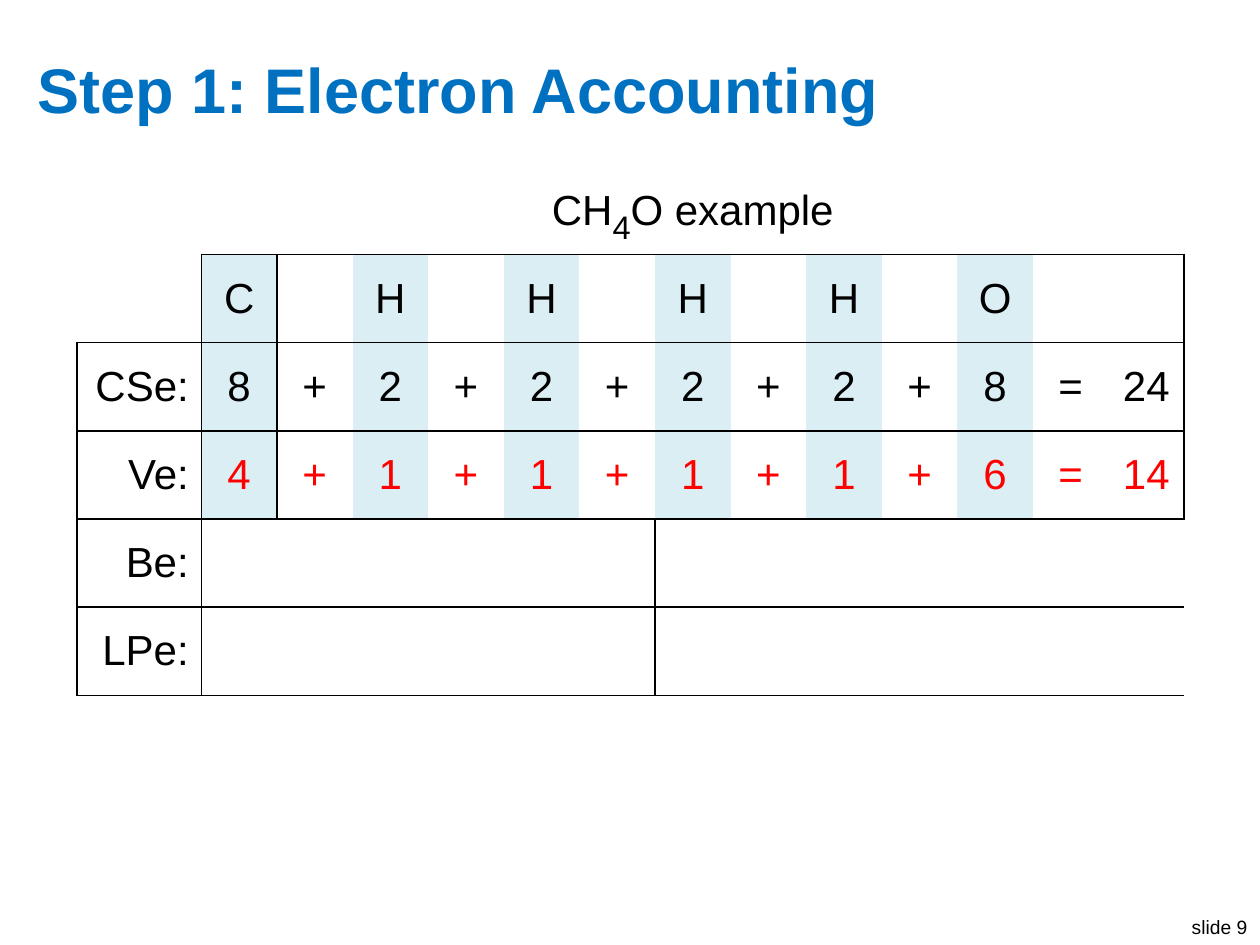
from dataclasses import dataclass

from lxml.etree import SubElement
from pptx import Presentation
from pptx.dml.color import RGBColor
from pptx.enum.text import MSO_ANCHOR as Anchor, MSO_AUTO_SIZE as AutoSize, PP_ALIGN as Align
from pptx.oxml.ns import qn
from pptx.util import Cm, Pt


@dataclass(frozen=True)
class Theme:
    """Colours, font and type sizes of the slide."""
    font: str = "Arial"
    title: str = "0070C0"
    ink: str = "000000"
    accent: str = "FF0000"
    paper: str = "FFFFFF"
    band: str = "DBEEF4"
    title_size: int = 36
    body_size: int = 24
    subscript_size: int = 32
    footer_size: int = 11


THEME = Theme()
NO_STYLE = "{2D5ABB26-0587-4C30-8999-92F81FD0307C}"
ATOMS = ["C", "H", "H", "H", "H", "O"]
COUNTS = [
    ("CSe:", [8, 2, 2, 2, 2, 8], THEME.ink),
    ("Ve:", [4, 1, 1, 1, 1, 6], THEME.accent),
]
PENDING = ["Be:", "LPe:"]
LABEL_WIDTH, UNIT_WIDTH, ROW_HEIGHT = 2.51, 1.524, 1.778
UNIT_COUNT = 2 * len(ATOMS) + 1
SPLIT = 7


def add_run(paragraph, text, size=THEME.body_size, color=THEME.ink, bold=False):
    """Append one formatted run and return it."""
    run = paragraph.add_run()
    run.text = text
    formats = {"name": THEME.font, "size": Pt(size), "bold": bold}
    for name, value in formats.items():
        setattr(run.font, name, value)
    run.font.color.rgb = RGBColor.from_string(color)
    return run


def add_label(slide, box, text, align, wrap, **style):
    """Place a line of text, vertically centred, in the given box."""
    frame = slide.shapes.add_textbox(*map(Cm, box)).text_frame
    formats = {"word_wrap": wrap, "auto_size": AutoSize.NONE, "vertical_anchor": Anchor.MIDDLE}
    for name, value in formats.items():
        setattr(frame, name, value)
    paragraph = frame.paragraphs[0]
    paragraph.alignment = align
    add_run(paragraph, text, **style)


def style_cell(cell, sides="", fill=THEME.paper):
    """Fill a cell and rule the named sides, out of L, R, T and B."""
    properties = cell._tc.get_or_add_tcPr()
    for side in "LRTB":
        if side in sides:
            line = SubElement(properties, qn(f"a:ln{side}"), w=str(Pt(1)))
            solid = SubElement(line, qn("a:solidFill"))
            SubElement(solid, qn("a:srgbClr"), val=THEME.ink)
    cell.fill.solid()
    cell.fill.fore_color.rgb = RGBColor.from_string(fill)
    cell.vertical_anchor = Anchor.MIDDLE


def write_cell(cell, text, align=Align.CENTER, color=THEME.ink):
    """Write text into a cell."""
    paragraph = cell.text_frame.paragraphs[0]
    paragraph.alignment = align
    if text:
        add_run(paragraph, text, color=color)


def fill_caption(table):
    """Write the formula across the top row."""
    style_cell(table.cell(0, 0))
    caption = table.cell(0, 1)
    caption.merge(table.cell(0, UNIT_COUNT))
    for column in range(1, UNIT_COUNT + 1):
        style_cell(table.cell(0, column), "B")
    write_cell(caption, "CH")
    paragraph = caption.text_frame.paragraphs[0]
    subscript = add_run(paragraph, "4", size=THEME.subscript_size)
    subscript.font._element.set("baseline", "-25000")
    add_run(paragraph, "O example")


def fill_units(table, row, texts, color=THEME.ink):
    """Write one row of units, with a band behind every atom."""
    for column, text in enumerate(texts, start=1):
        edge = {1: "L", UNIT_COUNT: "R"}.get(column, "")
        banded = column % 2 and column < UNIT_COUNT
        cell = table.cell(row, column)
        style_cell(cell, "TB" + edge, THEME.band if banded else THEME.paper)
        write_cell(cell, text, color=color)


def fill_pending(table, row):
    """Leave two wide empty cells for a later step."""
    for first, last in [(1, SPLIT - 1), (SPLIT, UNIT_COUNT)]:
        table.cell(row, first).merge(table.cell(row, last))
        for column in range(first, last + 1):
            edge = "L" * (column == first) + "R" * (column == last)
            style_cell(table.cell(row, column), "TB" + edge)


def add_accounting_table(slide, left, top):
    """Place the electron accounting table at the given corner."""
    labels = [label for label, _, _ in COUNTS] + PENDING
    row_count = len(labels) + 2
    width = LABEL_WIDTH + UNIT_COUNT * UNIT_WIDTH
    box = map(Cm, (left, top, width, row_count * ROW_HEIGHT))
    table = slide.shapes.add_table(row_count, UNIT_COUNT + 1, *box).table
    table.first_row = table.horz_banding = False
    table._tbl.tblPr.find(qn("a:tableStyleId")).text = NO_STYLE
    for index, column in enumerate(table.columns):
        column.width = Cm(UNIT_WIDTH if index else LABEL_WIDTH)
    for row in table.rows:
        row.height = Cm(ROW_HEIGHT)

    fill_caption(table)
    style_cell(table.cell(1, 0), "RB")
    fill_units(table, 1, [part for atom in ATOMS for part in (atom, "")] + [""])
    for row, label in enumerate(labels, start=2):
        style_cell(table.cell(row, 0), "LRTB")
        write_cell(table.cell(row, 0), label, Align.RIGHT)
    for row, (_, counts, color) in enumerate(COUNTS, start=2):
        terms = " + ".join(map(str, counts))
        fill_units(table, row, f"{terms} = {sum(counts)}".split(), color)
    for row in range(2 + len(COUNTS), row_count):
        fill_pending(table, row)


def main():
    """Build and save the slide."""
    presentation = Presentation()
    presentation.slide_width, presentation.slide_height = Cm(25.4), Cm(19.05)
    slide = presentation.slides.add_slide(presentation.slide_layouts[6])
    add_label(slide, (23.5, 18.31, 1.9, 0.74), "slide 9", Align.RIGHT, False,
              size=THEME.footer_size)
    add_label(slide, (0.51, 0.76, 24.38, 2.03), "Step 1: Electron Accounting", Align.LEFT, True,
              size=THEME.title_size, color=THEME.title, bold=True)
    add_accounting_table(slide, 1.55, 3.35)
    presentation.save("out.pptx")


if __name__ == "__main__":
    main()
